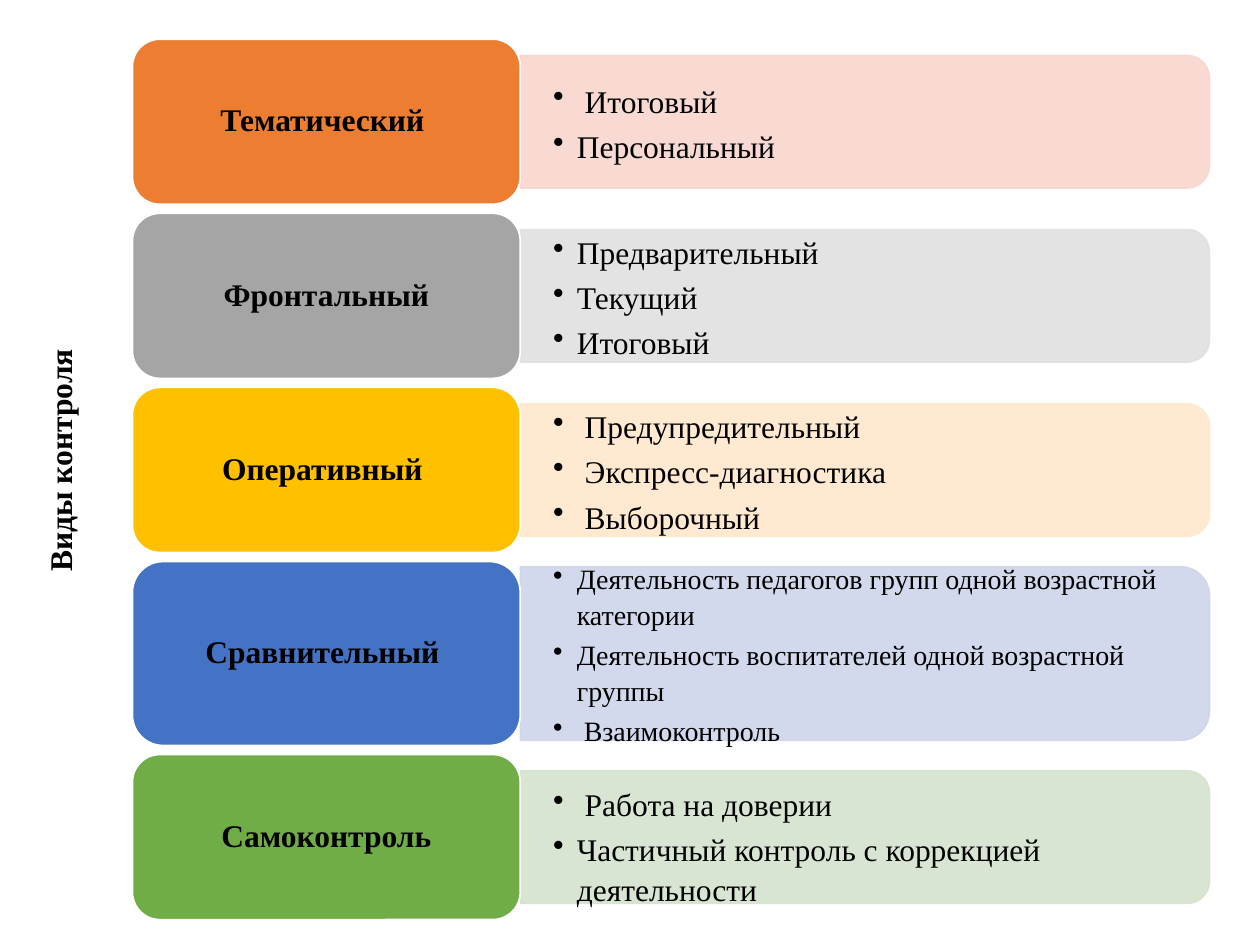
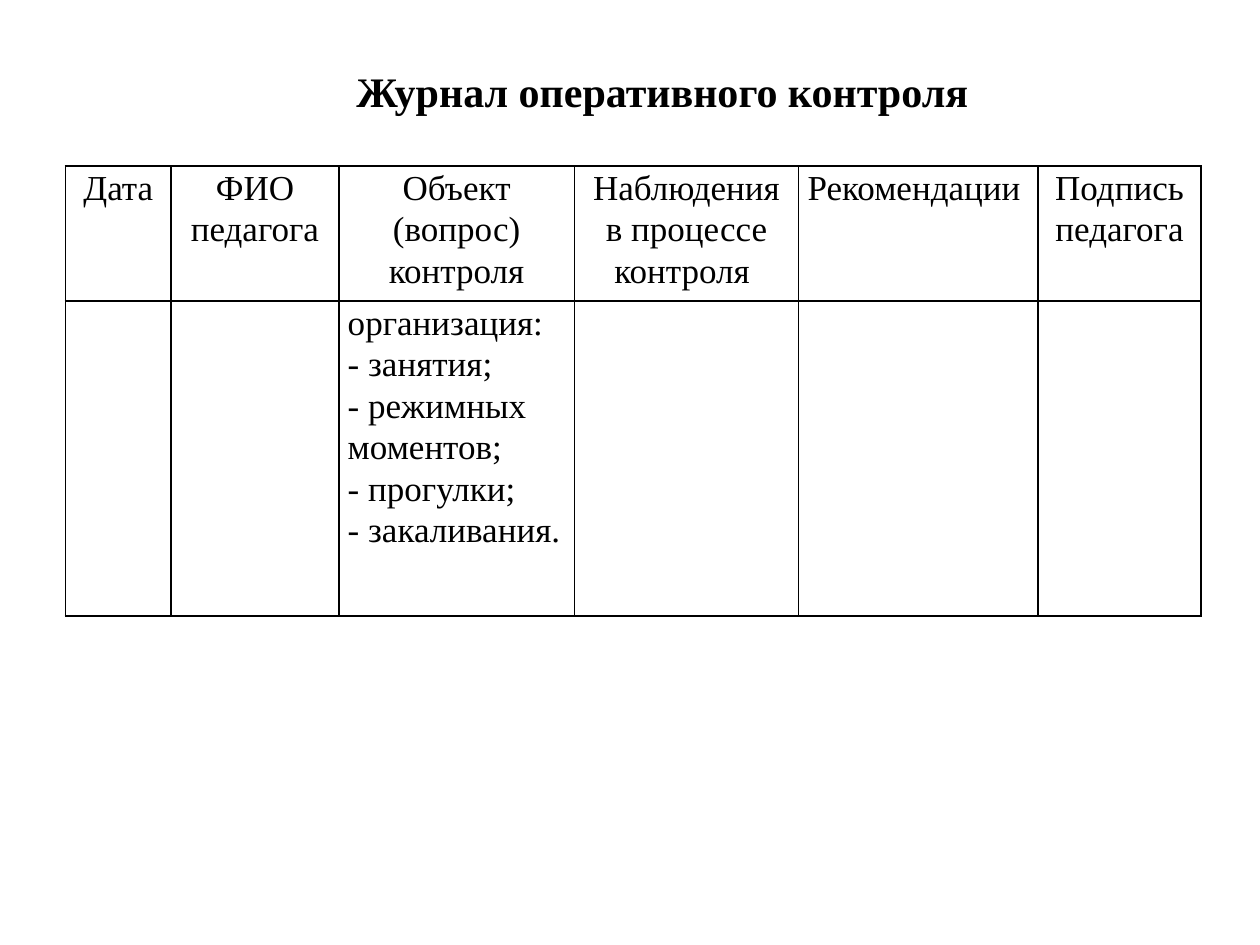
from lxml import etree
from pptx import Presentation
from pptx import util as u
from pptx.dml.color import RGBColor
from pptx.enum import shapes, text
from pptx.oxml import ns

FONT = "Times New Roman"
BLACK = RGBColor(0x00, 0x00, 0x00)
WHITE = RGBColor(0xFF, 0xFF, 0xFF)
ORANGE = RGBColor(0xED, 0x7D, 0x31)
GRAY = RGBColor(0xA5, 0xA5, 0xA5)
GOLD = RGBColor(0xFF, 0xC0, 0x00)
BLUE = RGBColor(0x44, 0x72, 0xC4)
GREEN = RGBColor(0x70, 0xAD, 0x47)
PEACH = RGBColor(0xF8, 0xD7, 0xCE)
SILVER = RGBColor(0xE1, 0xE1, 0xE1)
CREAM = RGBColor(0xFF, 0xE8, 0xCC)
LILAC = RGBColor(0xCF, 0xD5, 0xEA)
MINT = RGBColor(0xD5, 0xE3, 0xCF)

# Kinds of control: name, colour, panel colour, height, panel height, size, items
KINDS = [
    ("Тематический ", ORANGE, PEACH, 3.33, 2.67, 18, [" Итоговый", "Персональный"]),
    ("Фронтальный", GRAY, SILVER, 3.33, 2.67, 18,
     ["Предварительный", "Текущий", "Итоговый"]),
    ("Оперативный ", GOLD, CREAM, 3.33, 2.67, 18,
     [" Предупредительный", " Экспресс-диагностика", " Выборочный"]),
    ("Сравнительный ", BLUE, LILAC, 3.71, 3.5, 16,
     ["Деятельность педагогов групп одной возрастной категории",
      "Деятельность воспитателей одной возрастной группы", " Взаимоконтроль"]),
    ("Самоконтроль", GREEN, MINT, 3.33, 2.67, 18,
     [" Работа на доверии", "Частичный контроль с коррекцией деятельности"]),
]
TOP, GAP = 0.79, 0.18

# Journal table
HEADS = ["Дата", "ФИО педагога", "Объект (вопрос) контроля",
         "Наблюдения в процессе контроля ", "Рекомендации ", "Подпись педагога"]
TASKS = ["организация:", "- занятия;", "- режимных моментов;",
         "- прогулки;", "- закаливания."]
COLS = [2.13, 3.38, 4.75, 4.52, 4.83, 3.28]
ROWS = [2.72, 6.35]


def box(*sizes):
    return [u.Cm(size) for size in sizes]


def add(parent, tag, **attrs):
    return etree.SubElement(parent, ns.qn(tag), attrs)


class Deck:
    def __init__(self):
        self.prs = Presentation()
        self.prs.slide_width, self.prs.slide_height = box(25.4, 19.05)
        self.slide = None

    def page(self):
        self.slide = self.prs.slides.add_slide(self.prs.slide_layouts[5])

    def fill_in(self, frame, lines, size, bold=False, align=text.PP_ALIGN.LEFT,
                space=1.0, after=0):
        frame.text = "\n".join(lines)
        for para in frame.paragraphs:
            para.alignment = align
            para.line_spacing = space
            para.space_before = u.Pt(0)
            para.space_after = u.Pt(after)
            for run in para.runs:
                font = run.font
                font.name, font.size, font.bold = FONT, u.Pt(size), bold
                font.color.rgb = BLACK

    def inset(self, frame, side, edge):
        frame.margin_left = frame.margin_right = u.Cm(side)
        frame.margin_top = frame.margin_bottom = u.Cm(edge)
        frame.word_wrap = True
        frame.vertical_anchor = text.MSO_ANCHOR.MIDDLE

    def title(self, words, place, size, turn=0, **style):
        head = self.slide.shapes.title
        head.left, head.top, head.width, head.height = box(*place)
        head.rotation = turn
        frame = head.text_frame
        frame.auto_size = text.MSO_AUTO_SIZE.NONE
        frame.vertical_anchor = text.MSO_ANCHOR.TOP
        self.fill_in(frame, [words], size, bold=True, **style)

    def block(self, kind, place, fill, line):
        shape = self.slide.shapes.add_shape(kind, *box(*place))
        shape.shadow.inherit = False
        shape.fill.solid()
        shape.fill.fore_color.rgb = fill
        shape.line.color.rgb = line
        shape.line.width = u.Pt(1)
        return shape

    def panel(self, left, mid, width, height, color):
        # The preset is upright, so it is turned about its centre
        place = (left + (width - height) / 2, mid - width / 2, height, width)
        shape = self.block(shapes.MSO_SHAPE.ROUND_2_SAME_RECTANGLE, place, color, color)
        shape.rotation = 90
        for tint in shape._element.spPr.iter(ns.qn("a:srgbClr")):
            add(tint, "a:alpha", val="90000")

    def label(self, words, place, color):
        shape = self.block(shapes.MSO_SHAPE.ROUNDED_RECTANGLE, place, color, WHITE)
        self.inset(shape.text_frame, 0.34, 0.26)
        self.fill_in(shape.text_frame, [words], 18, bold=True,
                     align=text.PP_ALIGN.CENTER, space=0.9)

    def bullets(self, lines, place, size):
        frame = self.slide.shapes.add_textbox(*box(*place)).text_frame
        self.inset(frame, 0.69, 0.36)
        self.fill_in(frame, lines, size, space=1.07, after=size * 0.15)
        for para in frame.paragraphs:
            props = para._p.get_or_add_pPr()
            props.set("marL", str(u.Cm(0.48)))
            props.set("indent", str(-u.Cm(0.48)))
            add(props, "a:buChar", char="•")
        return frame

    def table(self, left, top, cols, rows):
        place = box(left, top, sum(cols), sum(rows))
        grid = self.slide.shapes.add_table(len(rows), len(cols), *place).table
        grid.first_row = grid.horz_banding = False
        for col, width in zip(grid.columns, cols):
            col.width = u.Cm(width)
        for row, height in zip(grid.rows, rows):
            row.height = u.Cm(height)
        for cell in grid.iter_cells():
            cell.margin_left = cell.margin_right = u.Cm(0.18)
            cell.margin_top = cell.margin_bottom = 0
            props = cell._tc.get_or_add_tcPr()
            for side in ("a:lnL", "a:lnR", "a:lnT", "a:lnB"):
                solid = add(add(props, side, w=str(u.Pt(1))), "a:solidFill")
                add(solid, "a:srgbClr", val=str(BLACK))
            cell.fill.background()
        return grid


def main():
    deck = Deck()

    # Slide 1: kinds of control
    deck.page()
    deck.title("Виды контроля ", (-5.38, 8.69, 13.16, 1.02), 18, turn=270,
               align=text.PP_ALIGN.CENTER)
    top = TOP
    for name, color, pale, tall, high, size, items in KINDS:
        mid = top + tall / 2
        deck.panel(10.49, mid, 13.89, high, pale)
        deep = high - 0.25
        frame = deck.bullets(items, (10.46, mid - deep / 2, 13.77, deep), size)
        deck.label(name, (2.67, top, 7.82, tall), color)
        top += tall + GAP
    frame.paragraphs[0].line_spacing = 1.5

    # Slide 2: journal
    deck.page()
    deck.title("Журнал оперативного контроля", (6.93, 1.12, 13.4, 1.27), 24,
               space=1.07, after=8)
    grid = deck.table(1.32, 3.35, COLS, ROWS)
    for col, head in enumerate(HEADS):
        deck.fill_in(grid.cell(0, col).text_frame, [head], 20,
                     align=text.PP_ALIGN.CENTER, space=1.07)
    deck.fill_in(grid.cell(1, 2).text_frame, TASKS, 20, space=1.07)

    deck.prs.save("out.pptx")


if __name__ == "__main__":
    main()
